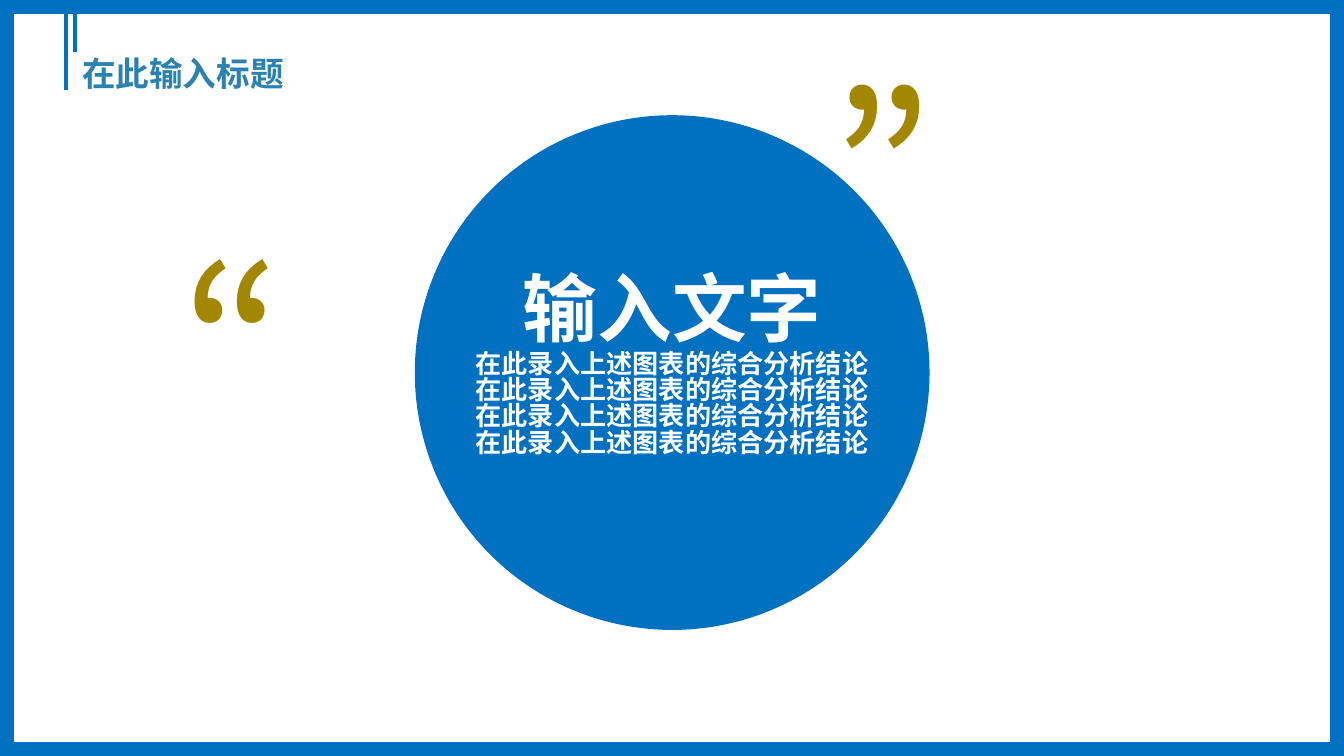
from pptx import Presentation
from pptx.dml.color import RGBColor
from pptx.enum import shapes, text
from pptx.oxml import ns
from pptx.util import Pt
from lxml import etree

BLUE = RGBColor(0x00, 0x70, 0xC0)
TITLE_BLUE = RGBColor(0x2A, 0x82, 0xB0)
GOLD = RGBColor(0xA4, 0x87, 0x00)
WHITE = RGBColor(0xFF, 0xFF, 0xFF)

CJK_FONT = "Noto Sans CJK JP"
WIDTH, HEIGHT = 720, 405
TIGHT = 0.84


def format_paragraph(para, size, color, font, bold=False, align=text.PP_ALIGN.LEFT):
    para.alignment = align
    for span in para.runs:
        span.font.size = Pt(size)
        span.font.bold = bold
        span.font.name = font
        span.font.color.rgb = color
        east_asian = etree.SubElement(span.font._element, ns.qn("a:ea"))
        east_asian.set("typeface", CJK_FONT)


def add_filled(page, kind, left, top, width, height):
    shape = page.shapes.add_shape(kind, Pt(left), Pt(top), Pt(width), Pt(height))
    shape.shadow.inherit = False
    shape.fill.solid()
    shape.fill.fore_color.rgb = BLUE
    shape.line.fill.background()
    return shape


def add_text_box(page, left, top, width, height, lines):
    box = page.shapes.add_textbox(Pt(left), Pt(top), Pt(width), Pt(height))
    frame = box.text_frame
    frame.word_wrap = True
    frame.text = "\n".join(lines)
    for para in frame.paragraphs:
        para.line_spacing = TIGHT
    return frame


def add_heading(page, left, top, width, height):
    """Place the title and the two hanging bars to its left."""
    title = page.shapes.title
    title.left, title.top = Pt(left), Pt(top)
    title.width, title.height = Pt(width), Pt(height)
    frame = title.text_frame
    frame.text = "在此输入标题"
    frame.vertical_anchor = text.MSO_ANCHOR.MIDDLE
    format_paragraph(frame.paragraphs[0], 18, TITLE_BLUE, "DejaVu Sans", bold=True)

    for x, bottom in ((left - 1.5, 48), (left + 3.5, 28)):
        bar = page.shapes.add_connector(
            shapes.MSO_CONNECTOR.STRAIGHT, Pt(x), Pt(0), Pt(x), Pt(bottom))
        bar.line.color.rgb = BLUE
        bar.line.width = Pt(2.25)
        etree.SubElement(bar._element.spPr, ns.qn("a:effectLst"))


def add_conclusion(page, left, top, size):
    """Place the disc with its headline and four lines of conclusion."""
    add_filled(page, shapes.MSO_SHAPE.OVAL, left, top, size, size)
    lines = ["输入文字"] + ["在此录入上述图表的综合分析结论"] * 4
    frame = add_text_box(page, left - 5.5, top + 83, size + 11, 124, lines)
    for number, para in enumerate(frame.paragraphs):
        format_paragraph(para, 14 if number else 40, WHITE, "Arial",
                         bold=True, align=text.PP_ALIGN.CENTER)


def add_quote_mark(page, left, top, mark):
    frame = add_text_box(page, left, top, 124, 147, [mark])
    format_paragraph(frame.paragraphs[0], 115, GOLD, CJK_FONT)


def add_border(page, width, height):
    border = add_filled(page, shapes.MSO_SHAPE.FRAME, 0, 0, width, height)
    border.adjustments[0] = 0.016
    border.line.color.rgb = BLUE
    border.line.width = Pt(2)


def main():
    deck = Presentation()
    deck.slide_width, deck.slide_height = Pt(WIDTH), Pt(HEIGHT)
    page = deck.slides.add_slide(deck.slide_layouts[5])
    add_heading(page, 36.75, 24.5, 648, 29)
    add_conclusion(page, 222.25, 61.75, 275.75)
    add_quote_mark(page, 90, 132, "“")
    add_quote_mark(page, 438.5, 39, "”")
    add_border(page, WIDTH, HEIGHT)
    deck.save("out.pptx")


if __name__ == "__main__":
    main()
